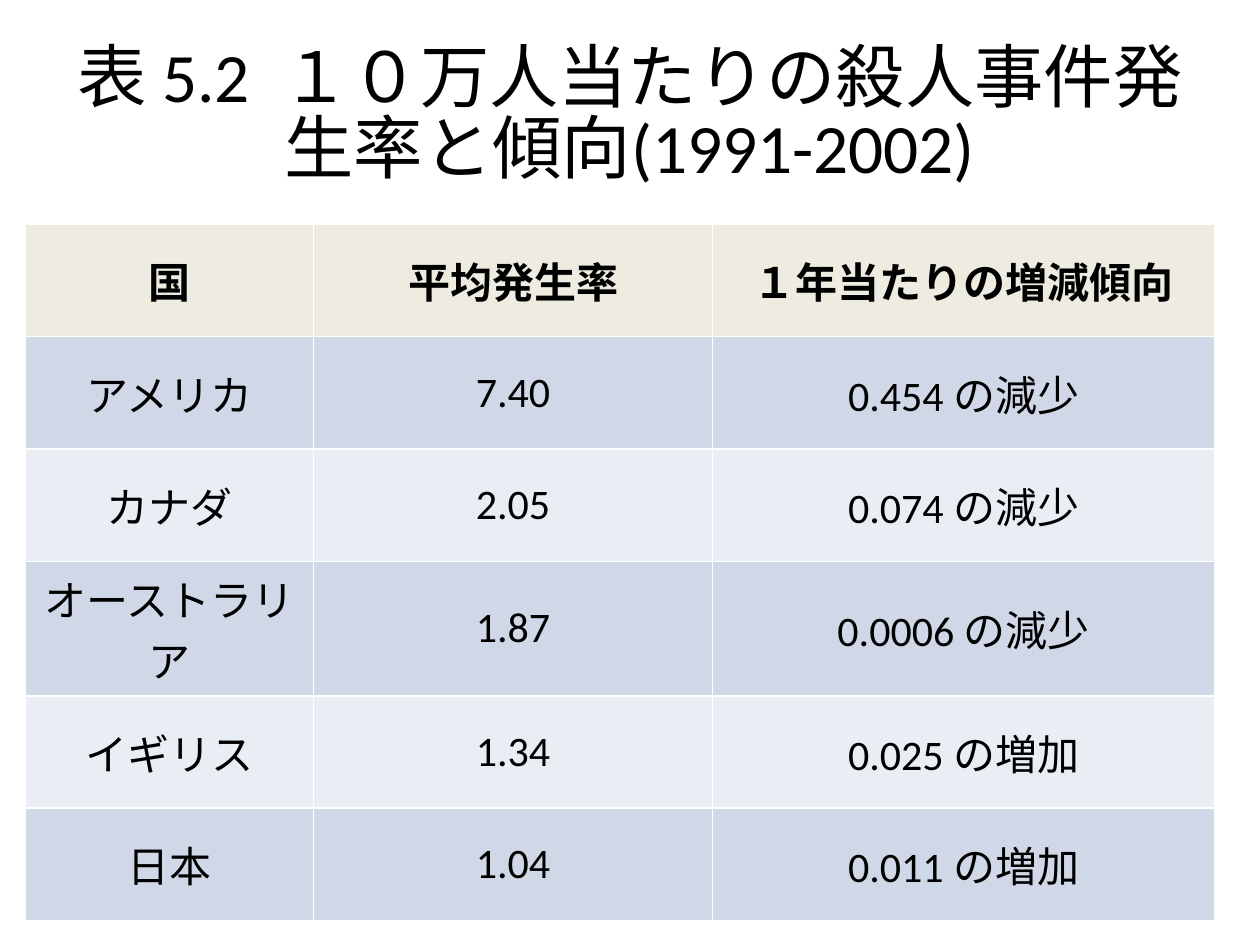
"""Builds a slide with a table of homicide rates and trends by country."""
from pptx import Presentation
from pptx.dml.color import RGBColor
from pptx.enum.text import MSO_ANCHOR, PP_ALIGN
from pptx.util import Pt

FONT = "Calibri"
BLACK = RGBColor(0x00, 0x00, 0x00)
HEADER = RGBColor(0xEE, 0xEC, 0xE1)
BANDS = (RGBColor(0xE9, 0xED, 0xF4), RGBColor(0xD0, 0xD8, 0xE8))

TITLE = "表 5.2  １０万人当たりの殺人事件発生率と傾向(1991-2002)"
COL_WIDTHS = (165, 228, 287)
ROWS = (
    ("国", "平均発生率", "１年当たりの増減傾向"),
    ("アメリカ", "7.40", "0.454 の減少"),
    ("カナダ", "2.05", "0.074 の減少"),
    ("オーストラリア", "1.87", "0.0006 の減少"),
    ("イギリス", "1.34", "0.025 の増加"),
    ("日本", "1.04", "0.011 の増加"),
)


def format_text(tf, size, bold=False):
    """Centre the first paragraph and set its font."""
    p = tf.paragraphs[0]
    p.alignment = PP_ALIGN.CENTER
    for r in p.runs:
        r.font.name = FONT
        r.font.size = Pt(size)
        r.font.bold = bold
        r.font.color.rgb = BLACK


def add_title(slide, left, top, width, height):
    """Move the title placeholder into the box and fill it."""
    sp = slide.shapes.title
    sp.left, sp.top, sp.width, sp.height = Pt(left), Pt(top), Pt(width), Pt(height)
    tf = sp.text_frame
    tf.text = TITLE
    tf.word_wrap = True
    tf.vertical_anchor = MSO_ANCHOR.MIDDLE
    tf.paragraphs[0].line_spacing = 0.85
    format_text(tf, 39.6)


def add_rate_table(slide, left, top, width, height):
    """Place the table of rates in the box, with a header and banded rows."""
    table = slide.shapes.add_table(
        len(ROWS), len(COL_WIDTHS), Pt(left), Pt(top), Pt(width), Pt(height)
    ).table
    for column, share in zip(table.columns, COL_WIDTHS):
        column.width = Pt(width * share / sum(COL_WIDTHS))
    for i, values in enumerate(ROWS):
        for j, value in enumerate(values):
            cell = table.cell(i, j)
            cell.text = value
            cell.vertical_anchor = MSO_ANCHOR.MIDDLE
            cell.fill.solid()
            cell.fill.fore_color.rgb = BANDS[i % 2] if i else HEADER
            format_text(cell.text_frame, 24, bold=i == 0)


def main():
    """Build the slide and save it."""
    prs = Presentation()
    prs.slide_width, prs.slide_height = Pt(720), Pt(540)
    slide = prs.slides.add_slide(prs.slide_layouts[5])
    add_title(slide, 36, 21.6, 648, 90)
    add_rate_table(slide, 14.2, 128.2, 680, 385.2)
    prs.save("out.pptx")


if __name__ == "__main__":
    main()
